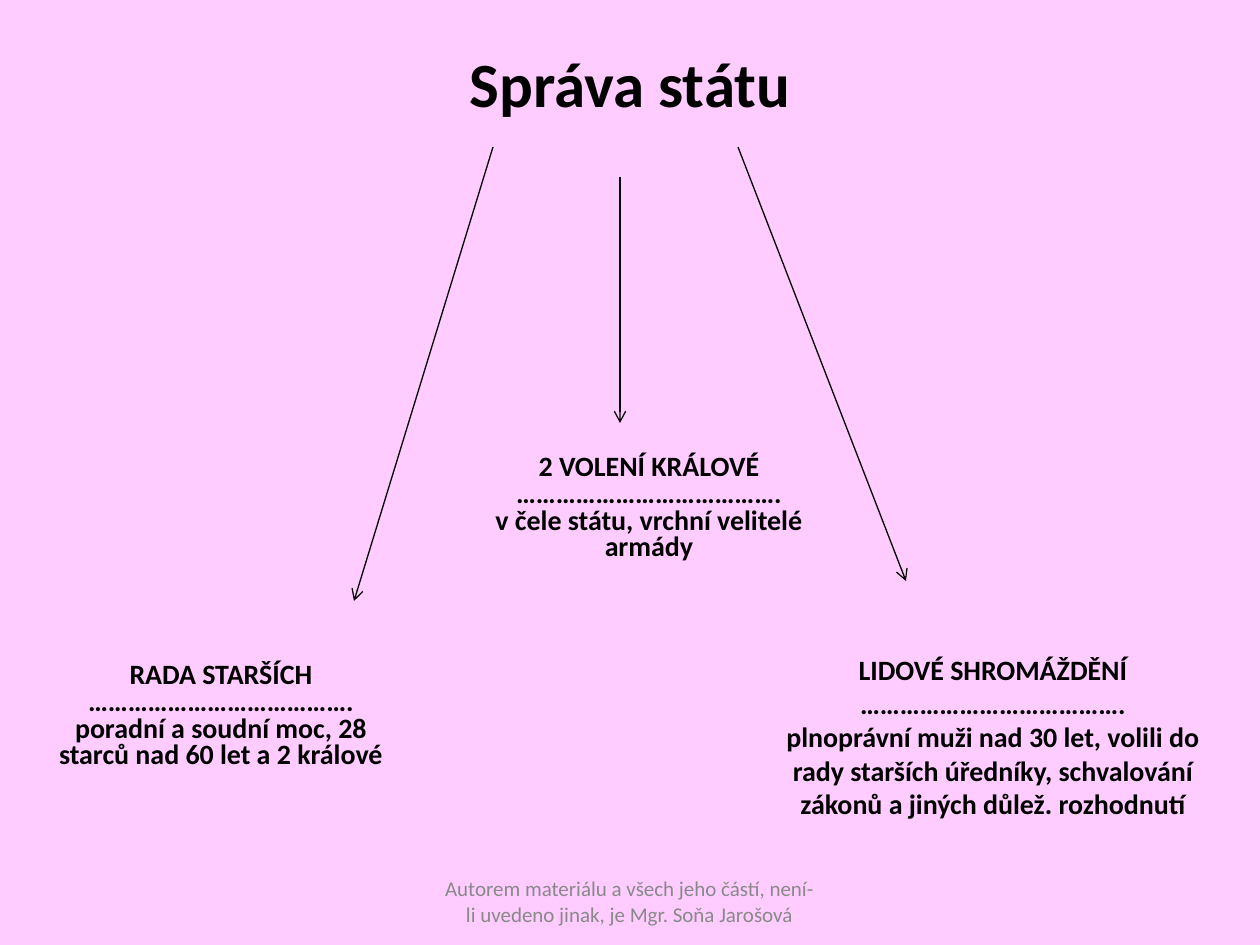
from dataclasses import dataclass

from lxml.etree import SubElement
from pptx import Presentation
from pptx.dml.color import RGBColor
from pptx.enum.shapes import MSO_CONNECTOR
from pptx.enum.text import MSO_ANCHOR, MSO_AUTO_SIZE, PP_ALIGN
from pptx.oxml.ns import qn
from pptx.util import Emu, Pt

EMU_PER_PX = 914400 / 126
INSET = 6
DOTS = "…………………………………."


def px(n):
    return Emu(round(n * EMU_PER_PX))


@dataclass(frozen=True)
class Theme:
    font: str = "Calibri"
    background: RGBColor = RGBColor(0xFF, 0xCC, 0xFF)
    ink: RGBColor = RGBColor(0, 0, 0)
    muted: RGBColor = RGBColor(0x89, 0x89, 0x89)
    title_size: int = 36
    body_size: int = 16
    footer_size: int = 12
    line_width: float = 0.75


class Deck:
    def __init__(self, theme):
        self.theme = theme
        self.prs = Presentation()
        self.prs.slide_width, self.prs.slide_height = px(1260), px(945)
        self.s = None

    def add_slide(self):
        self.s = self.prs.slides.add_slide(self.prs.slide_layouts[5])
        fill = self.s.background.fill
        fill.solid()
        fill.fore_color.rgb = self.theme.background

    def set_text(self, sp, lines, size, color, bold=True, spacing=1.0,
                 anchor=MSO_ANCHOR.MIDDLE, bottom=INSET):
        """Fill a shape with one centred paragraph per line."""
        tf = sp.text_frame
        tf.word_wrap = True
        tf.auto_size = MSO_AUTO_SIZE.NONE
        tf.vertical_anchor = anchor
        tf.margin_bottom = px(bottom)
        for i, line in enumerate(lines):
            p = tf.add_paragraph() if i else tf.paragraphs[0]
            p.alignment = PP_ALIGN.CENTER
            p.line_spacing = spacing
            r = p.add_run()
            r.text = line
            r.font.name = self.theme.font
            r.font.size = Pt(size)
            r.font.bold = bold
            r.font.color.rgb = color

    def title(self, text, x, y, w, h):
        sp = self.s.shapes.title
        sp.left, sp.top, sp.width, sp.height = map(px, (x, y, w, h))
        self.set_text(sp, [text], self.theme.title_size, self.theme.ink,
                      anchor=MSO_ANCHOR.TOP)

    def text_box(self, x, y, w, h):
        return self.s.shapes.add_textbox(*map(px, (x, y, w, h)))

    def power(self, name, role, x, y, w, h, spacing, bottom):
        """A branch of government: name, dotted rule and role."""
        self.set_text(self.text_box(x, y, w, h), [name, DOTS, role],
                      self.theme.body_size, self.theme.ink,
                      spacing=spacing, bottom=bottom)

    def footer(self, text, x, y, w, h):
        self.set_text(self.text_box(x, y, w, h), [text],
                      self.theme.footer_size, self.theme.muted, bold=False)

    def arrow(self, x1, y1, x2, y2):
        c = self.s.shapes.add_connector(
            MSO_CONNECTOR.STRAIGHT, *map(px, (x1, y1, x2, y2)))
        c.line.color.rgb = self.theme.ink
        c.line.width = Pt(self.theme.line_width)
        sp_pr = c.element.spPr
        SubElement(sp_pr.find(qn("a:ln")), qn("a:tailEnd"), type="arrow")
        SubElement(sp_pr, qn("a:effectLst"))


def main():
    deck = Deck(Theme())
    deck.add_slide()
    deck.footer("Autorem materiálu a všech jeho částí, není-li uvedeno jinak, "
                "je Mgr. Soňa Jarošová", 430, 876, 399, 50)
    deck.title("Správa státu", 63, 38, 1134, 109)

    for ends in ((620, 177, 620, 423),
                 (738, 147, 906, 581),
                 (493, 147, 354, 601)):
        deck.arrow(*ends)

    deck.power("2 VOLENÍ KRÁLOVÉ", "v čele státu, vrchní velitelé armády",
               462, 443, 374, 158, spacing=0.8, bottom=33)
    deck.power("RADA STARŠÍCH",
               "poradní a soudní moc, 28 starců nad 60 let a 2 králové",
               34, 651, 374, 158, spacing=0.8, bottom=33)
    deck.power("LIDOVÉ SHROMÁŽDĚNÍ",
               "plnoprávní muži nad 30 let, volili do rady starších úředníky, "
               "schvalování zákonů a jiných důlež. rozhodnutí",
               767, 640, 452, 227, spacing=1.0, bottom=40)
    deck.prs.save("out.pptx")


if __name__ == "__main__":
    main()
